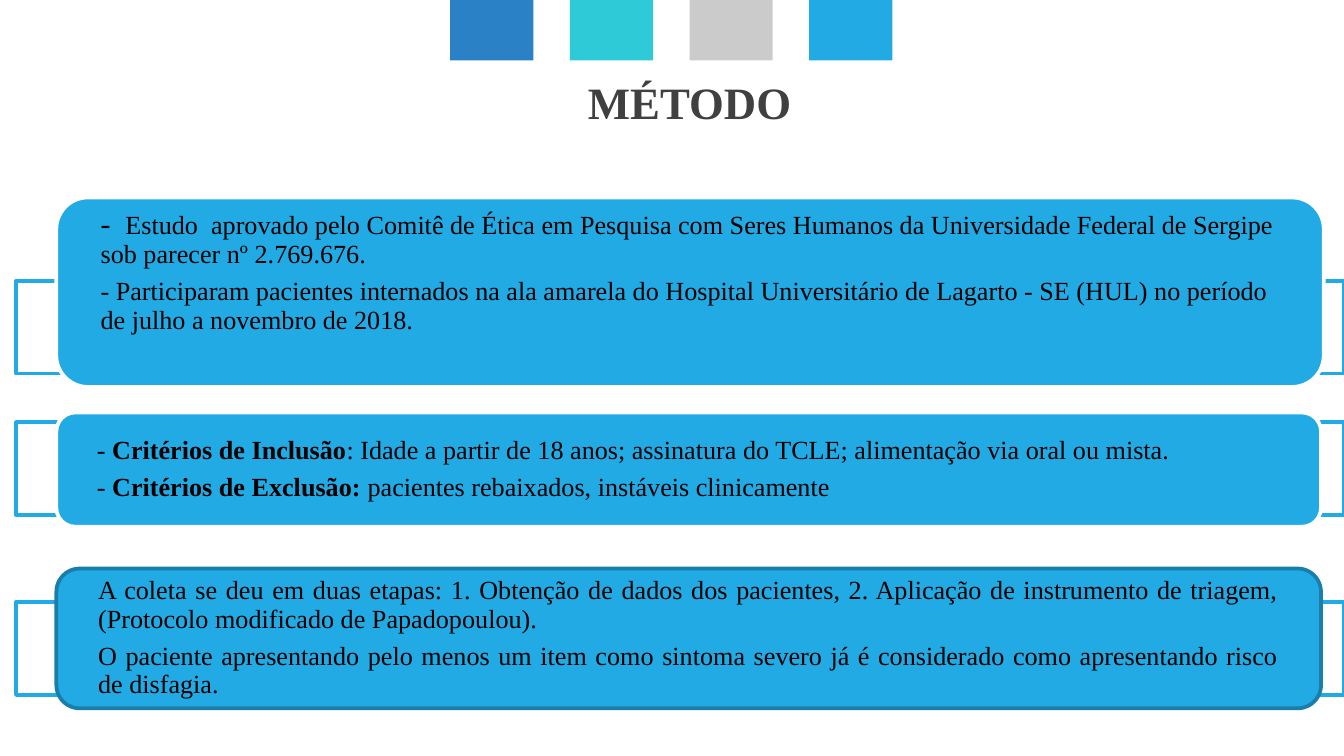
from lxml import etree
from pptx import Presentation
from pptx.dml.color import RGBColor
from pptx.enum.shapes import MSO_SHAPE
from pptx.enum.text import MSO_ANCHOR, PP_ALIGN
from pptx.oxml.ns import qn
from pptx.util import Pt

RECT, ROUNDED = MSO_SHAPE.RECTANGLE, MSO_SHAPE.ROUNDED_RECTANGLE
MIDDLE = MSO_ANCHOR.MIDDLE
LEFT, CENTER, JUSTIFY = PP_ALIGN.LEFT, PP_ALIGN.CENTER, PP_ALIGN.JUSTIFY

BLUE = RGBColor(0x22, 0xAA, 0xE4)
DARK_BLUE = RGBColor(0x19, 0x7E, 0xA9)
WHITE = RGBColor(0xFF, 0xFF, 0xFF)
BLACK = RGBColor(0, 0, 0)
GRAY = RGBColor(0x40, 0x40, 0x40)
TAB_COLORS = [RGBColor(0x2A, 0x81, 0xC6), RGBColor(0x2E, 0xCA, 0xD7),
              RGBColor(0xCB, 0xCB, 0xCB), BLUE]
FONT = "Times New Roman"

TITLE = "MÉTODO"
# Each paragraph is a list of (text, size, bold) spans.
CARDS = [
    {"top": 105.8, "height": 101.5, "width": 679, "frame_top": 150.5,
     "line": WHITE, "align": LEFT, "space_below": 22,
     "paragraphs": [
         [("-  ", 16, False),
          ("Estudo  aprovado pelo Comitê de Ética em Pesquisa com Seres Humanos "
           "da Universidade Federal de Sergipe sob parecer nº 2.769.676.", 14, False)],
         [("- Participaram pacientes internados na ala amarela do Hospital "
           "Universitário de Lagarto - SE (HUL) no período de julho a novembro "
           "de 2018.", 14, False)]]},
    {"top": 221, "height": 61.2, "width": 677.5, "frame_top": 226.1,
     "line": WHITE, "align": LEFT, "space_below": 0,
     "paragraphs": [
         [("- ", 14, False), ("Critérios de Inclusão", 14, True),
          (": Idade a partir de 18 anos; assinatura do TCLE; alimentação via "
           "oral ou mista.", 14, False)],
         [("- ", 14, False), ("Critérios de Exclusão: ", 14, True),
          ("pacientes rebaixados, instáveis clinicamente", 14, False)]]},
    {"top": 304.6, "height": 74.9, "width": 677.5, "frame_top": 322.6,
     "line": DARK_BLUE, "align": JUSTIFY, "space_below": 0,
     "paragraphs": [
         [("A coleta se deu em duas etapas: 1. Obtenção de dados dos pacientes, "
           "2. Aplicação de instrumento de triagem, (Protocolo modificado de "
           "Papadopoulou).", 14, False)],
         [("O paciente apresentando pelo menos um item como sintoma severo já é "
           "considerado como apresentando risco de disfagia.", 14, False)]]},
]

TAB_LEFT, TAB_PITCH, TAB_WIDTH, TAB_HEIGHT = 241.2, 64.1, 44.6, 32.4
FRAME_LEFT, FRAME_WIDTH, FRAME_HEIGHT = 8.6, 711.4, 49.7
CARD_LEFT = 30.2
CORNER_INSET = 0.049  # share of the card height kept clear of the corners
SIDE_MARGIN = 18.7


def add_block(slide, kind, left, top, width, height, fill, line=None):
    block = slide.shapes.add_shape(kind, Pt(left), Pt(top), Pt(width), Pt(height))
    block.shadow.inherit = False
    block.fill.solid()
    block.fill.fore_color.rgb = fill
    if line is None:
        block.line.fill.background()
    else:
        block.line.color.rgb = line
        block.line.width = Pt(2)
    return block


def set_opacity(block, percent):
    color = block.fill._xPr.find(qn("a:solidFill"))[0]
    etree.SubElement(color, qn("a:alpha")).set("val", str(percent * 1000))


def add_text_frame(slide, left, top, width, height):
    box = slide.shapes.add_textbox(Pt(left), Pt(top), Pt(width), Pt(height))
    frame = box.text_frame
    frame.word_wrap = True
    frame.vertical_anchor = MIDDLE
    return frame


def add_title(slide):
    paragraph = add_text_frame(slide, 13.7, 19.4, 711.4, 69.8).paragraphs[0]
    paragraph.text = TITLE
    paragraph.alignment = CENTER
    paragraph.font.name = FONT
    paragraph.font.size = Pt(24)
    paragraph.font.bold = True
    paragraph.font.color.rgb = GRAY


def add_card(slide, card):
    """Add the frame behind, the rounded card and its text."""
    top, width, height = card["top"], card["width"], card["height"]
    frame = add_block(slide, RECT, FRAME_LEFT, card["frame_top"],
                      FRAME_WIDTH, FRAME_HEIGHT, WHITE, BLUE)
    set_opacity(frame, 90)
    add_block(slide, ROUNDED, CARD_LEFT, top, width, height, BLUE, card["line"])

    inset = height * CORNER_INSET
    text = add_text_frame(slide, CARD_LEFT + inset, top + inset,
                          width - 2 * inset, height - 2 * inset)
    text.margin_left = text.margin_right = Pt(SIDE_MARGIN)
    text.margin_top = 0
    text.margin_bottom = Pt(card["space_below"])
    for index, spans in enumerate(card["paragraphs"]):
        paragraph = text.add_paragraph() if index else text.paragraphs[0]
        paragraph.alignment = card["align"]
        paragraph.line_spacing = 0.9
        paragraph.space_after = Pt(5)
        paragraph.font.name = FONT
        paragraph.font.color.rgb = BLACK
        for words, size, bold in spans:
            span = paragraph.add_run()
            span.text = words
            span.font.size = Pt(size)
            span.font.bold = bold


def main():
    deck = Presentation()
    deck.slide_width, deck.slide_height = Pt(720), Pt(405)
    slide = deck.slides.add_slide(deck.slide_layouts[6])
    add_title(slide)
    for index, color in enumerate(TAB_COLORS):
        add_block(slide, RECT, TAB_LEFT + index * TAB_PITCH, 0,
                  TAB_WIDTH, TAB_HEIGHT, color)
    for card in CARDS:
        add_card(slide, card)
    deck.save("out.pptx")


if __name__ == "__main__":
    main()
